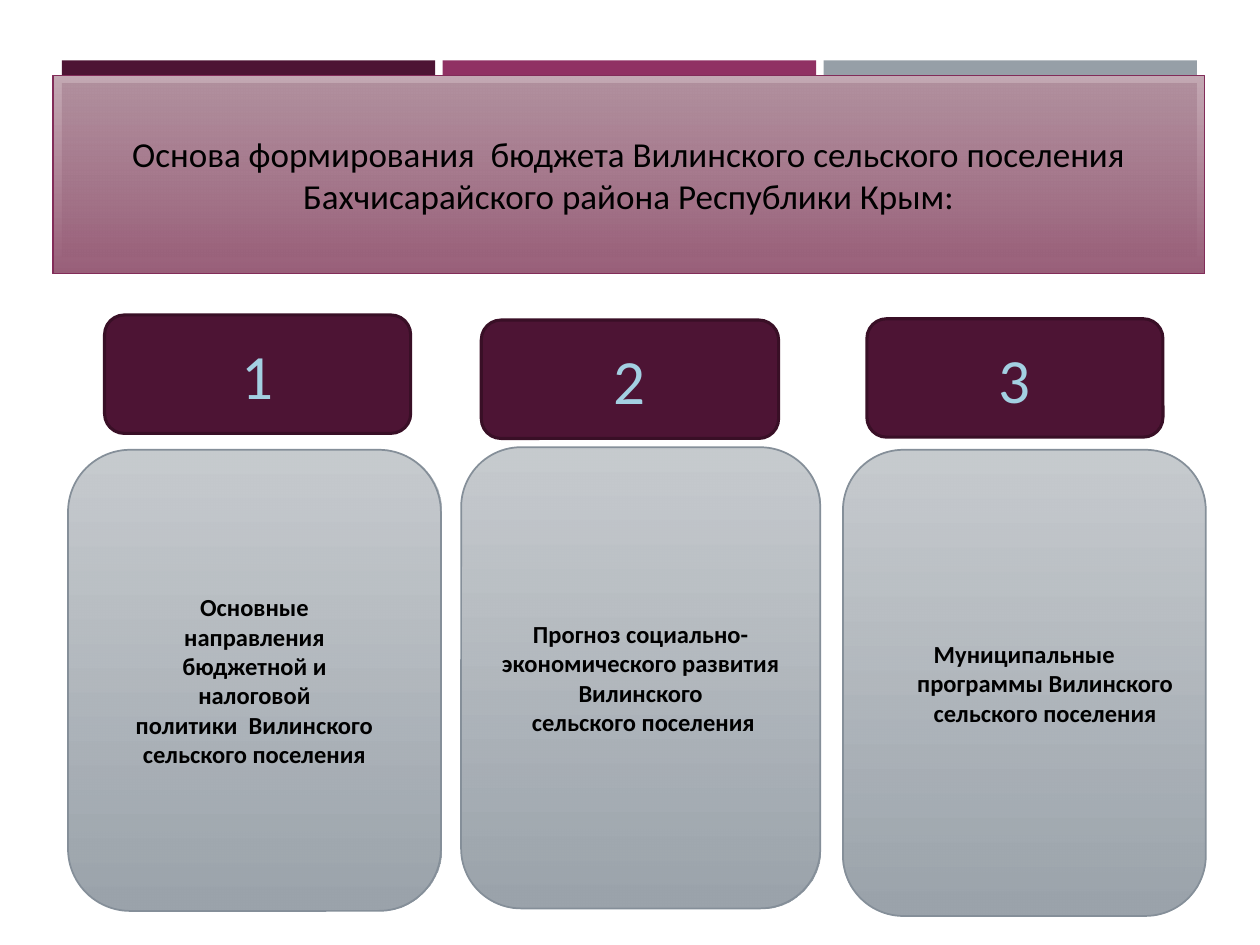
import pptx
import pptx.util
import pptx.dml.color
import pptx.enum.shapes
import pptx.enum.text
import pptx.oxml
import pptx.oxml.ns
from lxml import etree

RGBColor = pptx.dml.color.RGBColor
Inches = pptx.util.Inches
Pt = pptx.util.Pt
qn = pptx.oxml.ns.qn
SHAPES = pptx.enum.shapes.MSO_SHAPE

PLUM = RGBColor(0x4D, 0x14, 0x34)
PLUM_EDGE = RGBColor(0x39, 0x0F, 0x26)
MAGENTA = RGBColor(0x90, 0x31, 0x63)
MAGENTA_EDGE = RGBColor(0x82, 0x2C, 0x59)
GREY = RGBColor(0x96, 0x9F, 0xA7)
GREY_EDGE = RGBColor(0x85, 0x8F, 0x99)
ICE = RGBColor(0xA3, 0xD0, 0xE2)
BLACK = RGBColor(0, 0, 0)
CARD_GRADIENT = (RGBColor(0xC0, 0xC5, 0xC9), RGBColor(0x9B, 0xA3, 0xAB))
BANNER_GRADIENT = (RGBColor(0xBD, 0x9F, 0xAB), RGBColor(0x99, 0x5F, 0x79))

TITLE = ("Основа формирования  бюджета Вилинского сельского поселения "
         "Бахчисарайского района Республики Крым:")
BANNER_BOX = (0.42, 0.6, 9.14, 1.57)
STRIPES = [PLUM, MAGENTA, GREY]
STRIPE_LEFT, STRIPE_TOP, STRIPE_HEIGHT = 0.49, 0.48, 0.12
BAND_WIDTH, STRIPE_GAP = 9.01, 0.06

COLUMNS = [
    {"number": "1", "badge": (0.83, 2.5, 2.43, 0.94), "card": (0.54, 3.57, 2.96, 3.66),
     "text": ["Основные", "направления", "бюджетной и", "налоговой",
              "политики  Вилинского сельского поселения"]},
    {"number": "2", "badge": (3.82, 2.54, 2.36, 0.94), "card": (3.66, 3.55, 2.85, 3.66),
     "text": ["Прогноз социально-экономического развития Вилинского",
              " сельского поселения"]},
    {"number": "3", "badge": (6.88, 2.53, 2.35, 0.94), "card": (6.69, 3.57, 2.88, 3.7),
     "text": ["Муниципальные программы Вилинского сельского поселения"], "hanging": 0.33},
]


def add_box(slide, kind, box):
    shape = slide.shapes.add_shape(kind, *map(Inches, box))
    shape.shadow.inherit = False
    return shape


def round_placeholder(slide, placeholder, box):
    placeholder.left, placeholder.top, placeholder.width, placeholder.height = map(Inches, box)
    geometry = etree.Element(qn("a:prstGeom"), prst="roundRect")
    etree.SubElement(geometry, qn("a:avLst"))
    placeholder._element.spPr.insert(1, geometry)
    slide.shapes._spTree.append(placeholder._element)
    return placeholder


def paint(shape, colours, edge, weight):
    if len(colours) == 1:
        shape.fill.solid()
        shape.fill.fore_color.rgb = colours[0]
    else:
        shape.fill.gradient()
        shape.fill.gradient_angle = 270
        for stop, position, colour in zip(shape.fill.gradient_stops, (0, 1), colours):
            stop.position = position
            stop.color.rgb = colour
        first_colour = shape._element.spPr.find(".//" + qn("a:srgbClr"))
        etree.SubElement(first_colour, qn("a:alpha"), val="90000")
    shape.line.color.rgb = edge
    shape.line.width = Pt(weight)


def write(shape, lines, size, colour, bold=False, hanging=0):
    frame = shape.text_frame
    frame.text = "\n".join(lines)
    frame.word_wrap = True
    frame.auto_size = pptx.enum.text.MSO_AUTO_SIZE.NONE
    frame.vertical_anchor = pptx.enum.text.MSO_ANCHOR.MIDDLE
    for paragraph in frame.paragraphs:
        paragraph.alignment = pptx.enum.text.PP_ALIGN.CENTER
        paragraph.space_before = Pt(0)
        properties = paragraph._p.get_or_add_pPr()
        properties.set("marL", str(Inches(hanging)))
        properties.set("indent", str(-Inches(hanging)))
        etree.SubElement(properties, qn("a:buNone"))
        for run in paragraph.runs:
            run.font.name = "Calibri"
            run.font.size = Pt(size)
            run.font.bold = bold
            run.font.color.rgb = colour


def main():
    presentation = pptx.Presentation()
    presentation.slide_width, presentation.slide_height = Inches(10), Inches(7.5)
    slide = presentation.slides.add_slide(presentation.slide_layouts[3])
    title, first_body, last_body = slide.placeholders
    placeholders = {("1", "badge"): first_body, ("3", "card"): last_body}

    stripe_width = (BAND_WIDTH - STRIPE_GAP * (len(STRIPES) - 1)) / len(STRIPES)
    bars = [((STRIPE_LEFT + i * (stripe_width + STRIPE_GAP), STRIPE_TOP,
              stripe_width, STRIPE_HEIGHT), colour) for i, colour in enumerate(STRIPES)]
    bars.append(((STRIPE_LEFT, 0.66, BAND_WIDTH, 1.38), PLUM))
    for box, colour in bars:
        bar = add_box(slide, SHAPES.RECTANGLE, box)
        bar.fill.solid()
        bar.fill.fore_color.rgb = colour
        bar.line.fill.background()

    banner = round_placeholder(slide, title, BANNER_BOX)
    paint(banner, BANNER_GRADIENT, MAGENTA_EDGE, 1)
    write(banner, [TITLE], 20, BLACK)

    for column in COLUMNS:
        parts = {}
        for part in ("badge", "card"):
            placeholder = placeholders.get((column["number"], part))
            if placeholder is not None:
                parts[part] = round_placeholder(slide, placeholder, column[part])
            else:
                parts[part] = add_box(slide, SHAPES.ROUNDED_RECTANGLE, column[part])
        paint(parts["badge"], [PLUM], PLUM_EDGE, 1.75)
        write(parts["badge"], [column["number"]], 36, ICE)
        paint(parts["card"], CARD_GRADIENT, GREY_EDGE, 1)
        write(parts["card"], column["text"], 14, BLACK, True, column.get("hanging", 0))

    presentation.save("out.pptx")


if __name__ == "__main__":
    main()
